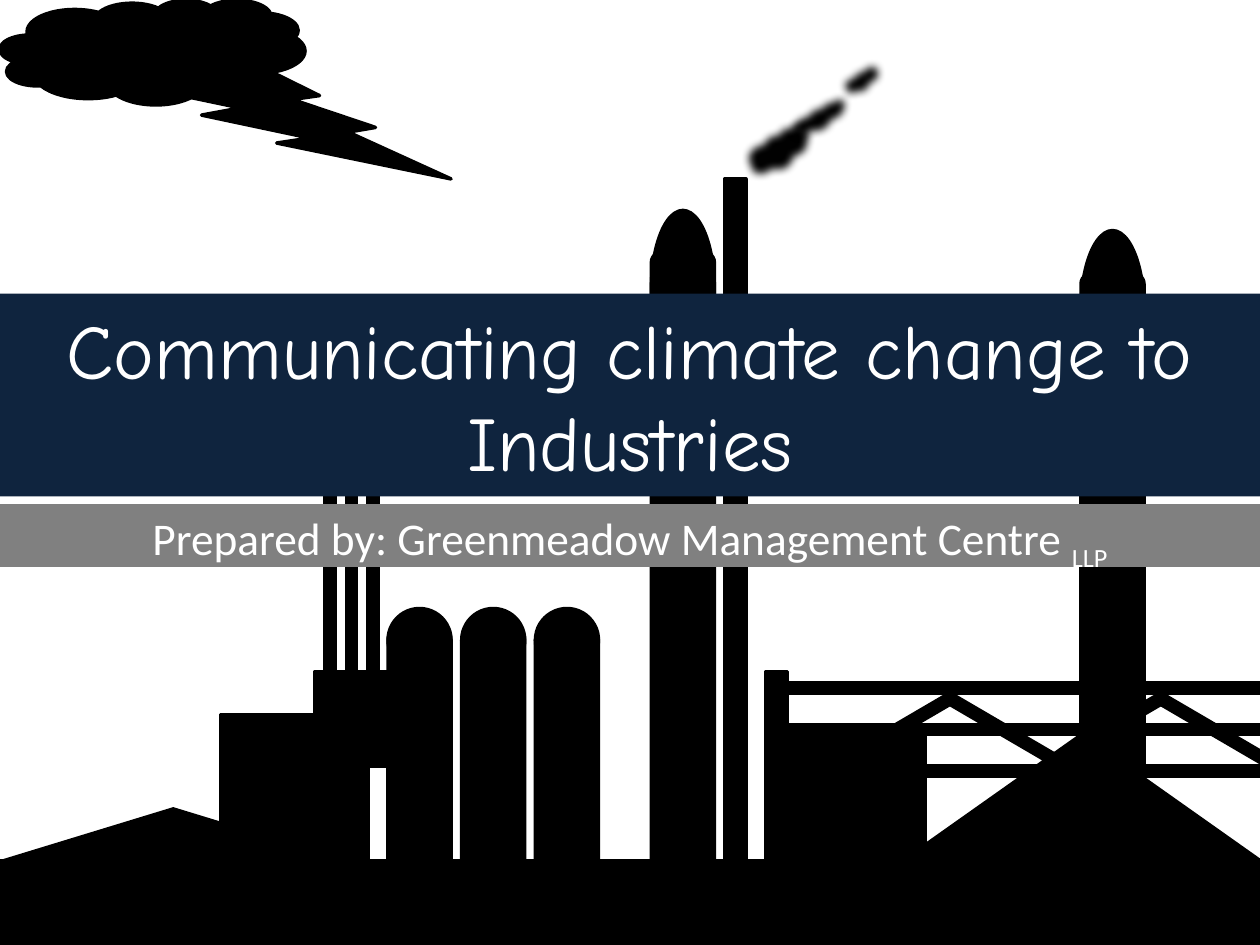
from lxml import etree
from pptx import Presentation
from pptx.dml.color import RGBColor
from pptx.enum import shapes, text
from pptx.oxml import ns
from pptx.util import Inches, Pt

BLACK = RGBColor(0, 0, 0)
WHITE = RGBColor(255, 255, 255)
NAVY = RGBColor(0x0F, 0x24, 0x3E)
GREY = RGBColor(0x80, 0x80, 0x80)
KIND = shapes.MSO_SHAPE
PIPE = 0.08   # thickness of thin pipes and beams
TANK = 0.5    # width of tanks and towers


def silhouette(page, kind, left, top, width, height, rotation=0):
    shape = page.shapes.add_shape(
        kind, Inches(left), Inches(top), Inches(width), Inches(height))
    shape.fill.solid()
    shape.fill.fore_color.rgb = BLACK
    shape.line.color.rgb = BLACK
    shape.line.width = Pt(2)
    shape.shadow.inherit = False
    shape.rotation = rotation
    return shape


def domed_tank(page, left, top, body_height, dome_height, dome_rise):
    silhouette(page, KIND.ROUNDED_RECTANGLE, left, top, TANK, body_height)
    silhouette(page, KIND.OVAL, left, top - dome_rise, TANK, dome_height)


def draw_workshop(page, left, ground):
    """Low roof, stepped halls and three thin chimneys."""
    silhouette(page, KIND.ISOSCELES_TRIANGLE, left, ground - 0.41, 2.75, 0.42)
    silhouette(page, KIND.RECTANGLE, left + 1.75, ground - 1.16, 1.17, 1.17)
    silhouette(page, KIND.RECTANGLE, left + 2.5, ground - 1.5, 0.58, 0.75)
    for index in range(3):
        silhouette(page, KIND.RECTANGLE, left + 2.58 + index * 0.17,
                   ground - 3.25, PIPE, 2.08)


def draw_towers(page):
    """Three storage tanks, two tall towers and the smoking chimney."""
    for index in range(3):
        domed_tank(page, 3.08 + index * 0.585, 5, 2, 0.5, 0.17)
    domed_tank(page, 5.17, 2, 5, 1.25, 0.33)
    domed_tank(page, 8.58, 2.17, 5, 1.25, 0.34)
    silhouette(page, KIND.RECTANGLE, 5.75, 1.42, 0.17, 5.58)


def draw_conveyor(page, left, top):
    """Post, hall, heap and the latticed bridge."""
    silhouette(page, KIND.RECTANGLE, left, top, 0.17, 1.67)
    silhouette(page, KIND.RECTANGLE, left + 0.09, top + 0.5, 1.17, 1.25)
    silhouette(page, KIND.ISOSCELES_TRIANGLE, left + 1.09, top + 0.5, 2.83, 1)
    for beam_left, drop in ((0.17, 0.09), (0.17, 0.42), (0.59, 0.75)):
        silhouette(page, KIND.RECTANGLE, left + beam_left, top + drop,
                   10 - left - beam_left, PIPE)
    for index in range(4):
        silhouette(page, KIND.RECTANGLE, left + 0.54 + index * 0.837, top + 0.42,
                   1, PIPE, 30.3 if index % 2 else -30.3)


def fill_banner(banner, top, height, color):
    banner.left, banner.top = Inches(0), Inches(top)
    banner.width, banner.height = Inches(10), Inches(height)
    banner.fill.solid()
    banner.fill.fore_color.rgb = color
    banner.text_frame.auto_size = text.MSO_AUTO_SIZE.NONE
    # Bring the banner in front of the factory
    banner.element.getparent().append(banner.element)


def set_font(para, name, size):
    para.alignment = text.PP_ALIGN.CENTER
    para.font.name = name
    para.font.size = Pt(size)
    para.font.color.rgb = WHITE


def draw_banners(page):
    title, subtitle = page.shapes.title, page.placeholders[1]
    fill_banner(title, 2.33, 1.61, NAVY)
    title.text_frame.text = "Communicating climate change to Industries"
    title.text_frame.vertical_anchor = text.MSO_ANCHOR.MIDDLE
    set_font(title.text_frame.paragraphs[0], "Comic Neue", 44)

    fill_banner(subtitle, 4, 0.5, GREY)
    subtitle.text_frame.vertical_anchor = text.MSO_ANCHOR.TOP
    para = subtitle.text_frame.paragraphs[0]
    set_font(para, "Calibri", 25.9)
    para.add_run().text = "Prepared by: Greenmeadow Management Centre "
    span = para.add_run()
    span.text = "LLP"
    span._r.get_or_add_rPr().set("baseline", "-25000")


def draw_sky(page):
    """Storm cloud with lightning, and soft smoke puffs."""
    silhouette(page, KIND.LIGHTNING_BOLT, 1, 0.5, 2.58, 0.92)
    silhouette(page, KIND.CLOUD, 0, 0, 2.42, 0.83)
    for puff in ((5.84, 0.98, 0.69, 0.43), (6.2, 0.78, 0.62, 0.32),
                 (6.62, 0.49, 0.45, 0.3)):
        smoke = silhouette(page, KIND.CLOUD, *puff, rotation=-23.8)
        effects = smoke.element.spPr.find(ns.qn("a:effectLst"))
        etree.SubElement(effects, ns.qn("a:softEdge"), rad=str(Pt(5)))


def main():
    deck = Presentation()
    deck.slide_width, deck.slide_height = Inches(10), Inches(7.5)
    page = deck.slides.add_slide(deck.slide_layouts[0])
    silhouette(page, KIND.RECTANGLE, 0, 6.83, 10, 0.67)  # ground
    draw_workshop(page, 0, 6.83)
    draw_towers(page)
    draw_conveyor(page, 6.08, 5.33)
    draw_banners(page)
    draw_sky(page)
    deck.save("out.pptx")


if __name__ == "__main__":
    main()
